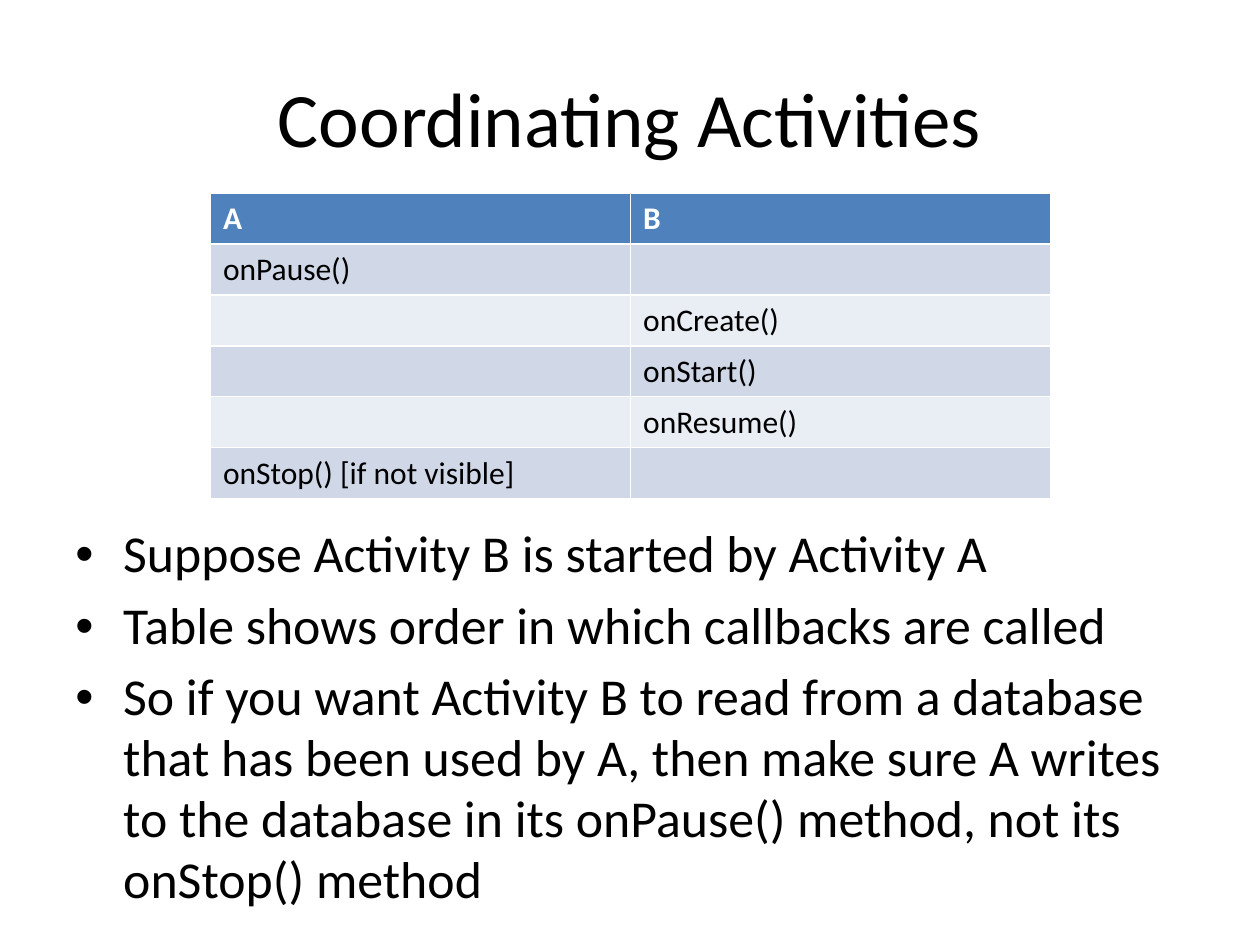
from lxml import etree
from pptx import Presentation
from pptx import util as u
from pptx.dml.color import RGBColor
from pptx.enum import text as t
from pptx.oxml.ns import qn

FONT = "Calibri"
HUES = {"ink": "000000", "head": "4F81BD", "white": "FFFFFF",
        "odd": "D0D8E8", "even": "E9EDF4"}
ROWS = [("A", "B"), ("onPause()", ""), ("", "onCreate()"),
        ("", "onStart()"), ("", "onResume()"),
        ("onStop() [if not visible]", "")]
POINTS = [
    "Suppose Activity B is started by Activity A",
    "Table shows order in which callbacks are called",
    "So if you want Activity B to read from a database that has been used "
    "by A, then make sure A writes to the database in its onPause() method, "
    "not its onStop() method",
]


def hue(name):
    return RGBColor.from_string(HUES[name])


def style(para, size, color="ink", bold=False):
    for run in para.runs:
        font = run.font
        font.name, font.size, font.bold = FONT, u.Pt(size), bold
        font.color.rgb = hue(color)


def add_frame(slide, box):
    frame = slide.shapes.add_textbox(*map(u.Inches, box)).text_frame
    frame.word_wrap = True
    return frame


def add_title(slide, box, words):
    frame = add_frame(slide, box)
    frame.vertical_anchor = t.MSO_ANCHOR.MIDDLE
    frame.text = words
    para = frame.paragraphs[0]
    para.alignment = t.PP_ALIGN.CENTER
    style(para, 44)


def add_grid(slide, box, rows):
    # The default table style supplies the white borders
    grid = slide.shapes.add_table(len(rows), len(rows[0]),
                                  *map(u.Inches, box)).table
    for r, row in enumerate(rows):
        shade = "head" if r == 0 else "odd" if r % 2 else "even"
        for c, words in enumerate(row):
            cell = grid.cell(r, c)
            cell.fill.solid()
            cell.fill.fore_color.rgb = hue(shade)
            cell.text = words
            style(cell.text_frame.paragraphs[0], 18,
                  "ink" if r else "white", bold=r == 0)


def add_bullet(para, indent):
    props = para._p.get_or_add_pPr()
    props.set("marL", str(u.Inches(indent)))
    props.set("indent", str(-u.Inches(indent)))
    etree.SubElement(props, qn("a:buFont")).set("typeface", "Arial")
    etree.SubElement(props, qn("a:buChar")).set("char", "•")


def add_points(slide, box, points):
    frame = add_frame(slide, box)
    frame.text = "\n".join(points)
    for para in frame.paragraphs:
        para.line_spacing = 0.98
        para.space_before = u.Pt(6)
        add_bullet(para, 0.38)
        style(para, 29.6)


def main():
    deck = Presentation()
    deck.slide_width, deck.slide_height = u.Inches(10), u.Inches(7.5)
    slide = deck.slides.add_slide(deck.slide_layouts[6])
    add_title(slide, (0.5, 0.3, 9, 1.25), "Coordinating Activities")
    add_grid(slide, (1.67, 1.53, 6.67, 2.43), ROWS)
    add_points(slide, (0.5, 4.11, 9, 3.02), POINTS)
    deck.save("out.pptx")


if __name__ == "__main__":
    main()
